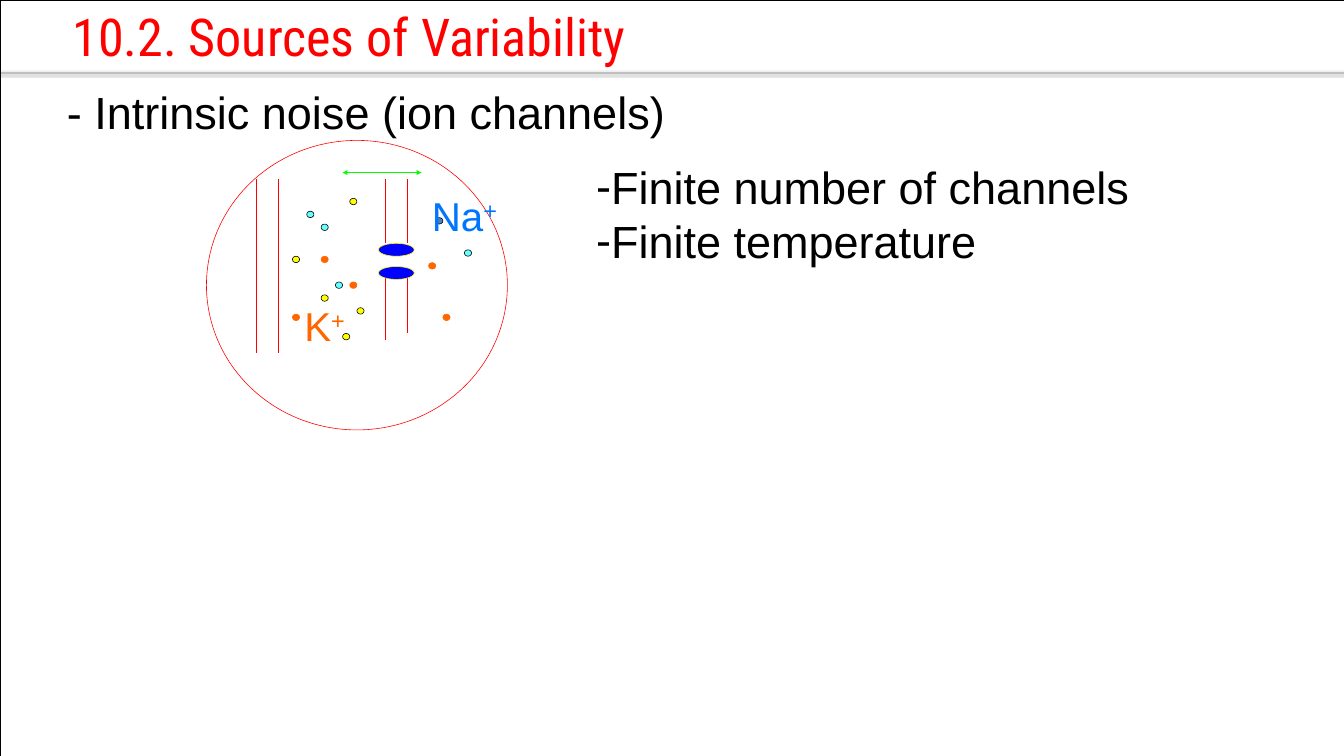
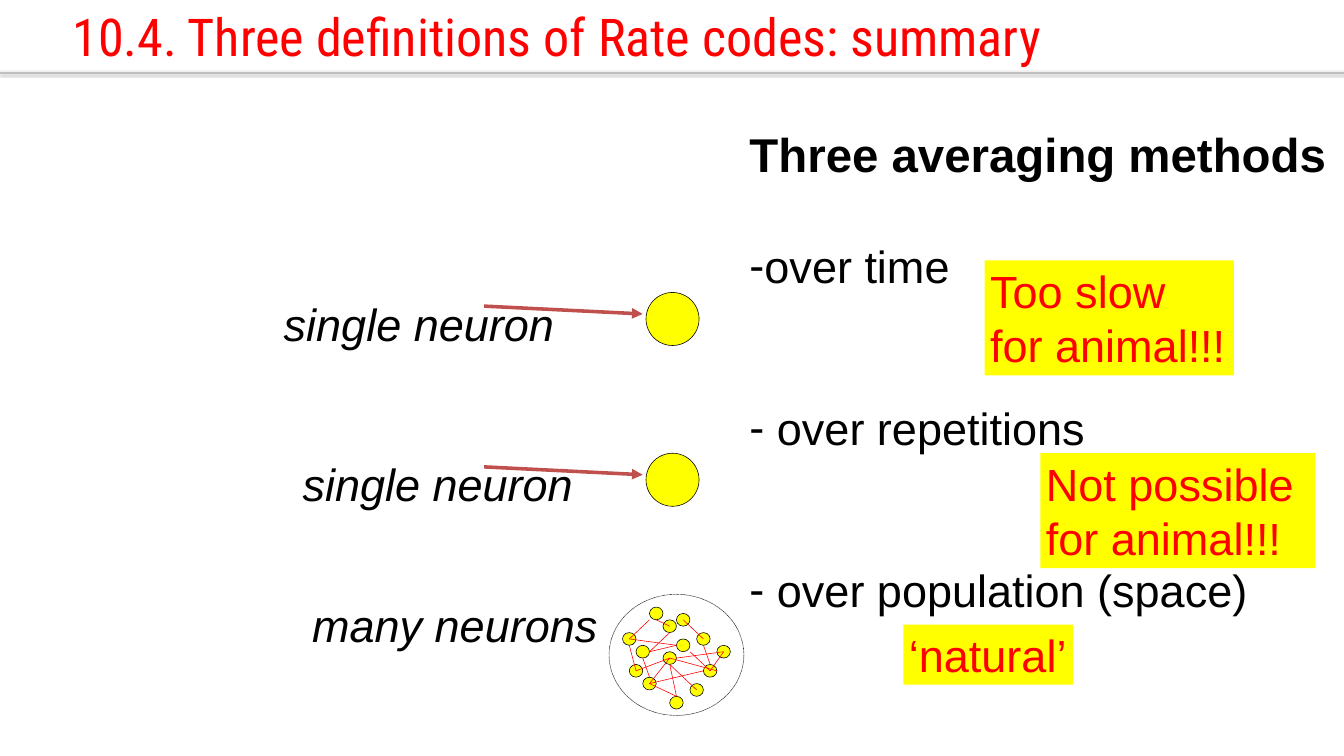
from dataclasses import dataclass

from lxml import etree
from pptx import Presentation
from pptx.dml.color import RGBColor
from pptx.enum.dml import MSO_LINE
from pptx.enum.shapes import MSO_CONNECTOR, MSO_SHAPE
from pptx.enum.text import MSO_ANCHOR, MSO_AUTO_SIZE, PP_ALIGN
from pptx.oxml.ns import qn
from pptx.util import Cm, Pt

OVAL, RECTANGLE = MSO_SHAPE.OVAL, MSO_SHAPE.RECTANGLE
STRAIGHT = MSO_CONNECTOR.STRAIGHT
DOTTED = MSO_LINE.ROUND_DOT
TOP, LEFT, NO_FIT = MSO_ANCHOR.TOP, PP_ALIGN.LEFT, MSO_AUTO_SIZE.NONE


@dataclass(frozen=True)
class Theme:
    """Colours, fonts and sizes shared by the slides."""
    black: str = "000000"
    red: str = "FF0000"
    yellow: str = "FFFF00"
    green: str = "00FF00"
    cyan: str = "66FFFF"
    steel: str = "4F81BD"
    orange: str = "FF6600"
    channel: str = "0000FF"
    sodium: str = "0076FF"
    arrow: str = "C0504D"
    rule: str = "BFBFBF"
    title_font: str = "Roboto Condensed"
    body_font: str = "Arial"
    title_size: float = 66
    heading_size: float = 60
    body_size: float = 57
    ion_size: float = 51
    leading: float = 1.2
    hairline: float = 0.75
    width: float = 60.02
    height: float = 33.76
    wide_inset: tuple = (0.53, 0.28)
    inset: tuple = (0.25, 0.13)


THEME = Theme()


@dataclass(frozen=True)
class Grid:
    """Even grid of cells laid over a drawing, in centimetres."""
    left: float
    top: float
    width: float
    height: float
    columns: int
    rows: int

    def point(self, column, row):
        """Return the position of a grid point."""
        return (self.left + column * self.width / self.columns,
                self.top + row * self.height / self.rows)

    def box(self, column, row, columns, rows):
        """Return left, top, width and height of a block of cells."""
        return (*self.point(column, row),
                columns * self.width / self.columns,
                rows * self.height / self.rows)


MEMBRANE = Grid(9.22, 6.27, 13.44, 12.93, 42, 45)
WALLS = [(7, 6, 33), (10, 6, 33), (25, 6, 16), (28, 6, 16), (25, 20, 31), (28, 20, 30)]
IONS = [
    (THEME.cyan, THEME.black, [(14, 11), (16, 13), (18, 22), (36, 17)]),
    (THEME.steel, THEME.black, [(32, 12)]),
    (THEME.yellow, THEME.black, [(19, 30), (21, 26), (20, 9), (16, 24), (12, 18)]),
    (THEME.orange, THEME.orange, [(16, 18), (12, 27), (20, 22), (33, 27), (31, 19)]),
]
POPULATION = Grid(27.2, 26.54, 6.02, 5.41, 20, 19)
NEURONS = [(6, 2), (8, 4), (10, 3), (9, 16), (16, 8), (13, 6), (8, 9), (10, 7),
           (12, 14), (14, 11), (3, 11), (2, 6), (5, 13), (4, 8)]
SYNAPSES = [
    (9, 11, 10, 16), (12, 9, 15, 12), (6, 14, 14, 12), (9, 11, 13, 15),
    (5, 10, 6, 13), (14, 8, 15, 11), (11, 4, 14, 7), (9, 6, 6, 9),
    (6, 4, 3, 7), (3, 8, 4, 12), (6, 9, 10, 8), (17, 9, 10, 10),
    (6, 14, 10, 16), (7, 4, 9, 5), (3, 7, 10, 8), (6, 14, 9, 10),
    (4, 12, 9, 10), (17, 9, 15, 12), (9, 10, 16, 12),
]


def rgb(value):
    """Turn a hex string into a colour."""
    return RGBColor.from_string(value)


def put_text(frame, text, *, size=THEME.body_size, font=THEME.body_font,
             color=THEME.black, bold=False, italic=False, bullet=None,
             before=0, leading=THEME.leading, superscript=""):
    """Append one formatted paragraph to a text frame."""
    paragraph = frame.add_paragraph() if frame.text else frame.paragraphs[0]
    paragraph.alignment = LEFT
    paragraph.space_before, paragraph.space_after = Pt(before), Pt(0)
    if leading:
        paragraph.line_spacing = Pt(size * leading)
    properties = paragraph._p.get_or_add_pPr()
    properties.set("marL", "0")
    properties.set("indent", "0")
    if bullet:
        etree.SubElement(properties, qn("a:buFont"), typeface=font)
        etree.SubElement(properties, qn("a:buChar"), char=bullet)
    else:
        etree.SubElement(properties, qn("a:buNone"))
    for part in filter(None, (text, superscript)):
        run = paragraph.add_run()
        run.text = part
        run.font.name, run.font.size = font, Pt(size)
        run.font.bold, run.font.italic = bold, italic
        run.font.color.rgb = rgb(color)
    if superscript:
        run._r.get_or_add_rPr().set("baseline", "30000")


def set_frame(frame, inset, wrap):
    """Set insets, wrapping and anchor of a text frame."""
    frame.margin_left = frame.margin_right = Cm(inset[0])
    frame.margin_top = frame.margin_bottom = Cm(inset[1])
    frame.word_wrap = wrap
    frame.auto_size = NO_FIT
    frame.vertical_anchor = TOP
    return frame


def place(placeholder, box, inset):
    """Move a placeholder and return its prepared text frame."""
    left, top, width, height = map(Cm, box)
    placeholder.left, placeholder.top = left, top
    placeholder.width, placeholder.height = width, height
    return set_frame(placeholder.text_frame, inset, True)


def add_label(shapes, box, *lines, inset=THEME.inset, fill=None, **text_format):
    """Add a text box with one paragraph for each line."""
    label = shapes.add_textbox(*map(Cm, box))
    if fill:
        label.fill.solid()
        label.fill.fore_color.rgb = rgb(fill)
    frame = set_frame(label.text_frame, inset, False)
    for line in lines:
        put_text(frame, line, **text_format)


def add_outline(shapes, kind, box, *, fill=None, line=THEME.black, dash=None):
    """Add a thin-lined preset shape."""
    shape = shapes.add_shape(kind, *map(Cm, box))
    shape.shadow.inherit = False
    if fill:
        shape.fill.solid()
        shape.fill.fore_color.rgb = rgb(fill)
    else:
        shape.fill.background()
    shape.line.color.rgb = rgb(line)
    shape.line.width = Pt(THEME.hairline)
    if dash:
        shape.line.dash_style = dash


def add_line(shapes, start, end, *, color=THEME.red, width=THEME.hairline, arrows=()):
    """Add a straight line and return its empty effect list."""
    line = shapes.add_connector(STRAIGHT, *map(Cm, (*start, *end)))
    line.line.color.rgb = rgb(color)
    line.line.width = Pt(width)
    properties = line._element.spPr
    for arrow in arrows:
        etree.SubElement(properties.find(qn("a:ln")), qn(arrow), type="triangle")
    return etree.SubElement(properties, qn("a:effectLst"))


def new_slide(deck, title):
    """Add a slide with the shared title and shadowed rule."""
    slide = deck.slides.add_slide(deck.slide_layouts[1])
    frame = place(slide.shapes.title, (2.98, 0.1, 56.8, 3), (0.25, 0.1))
    put_text(frame, title, size=THEME.title_size, font=THEME.title_font,
             color=THEME.red, leading=None)
    effects = add_line(slide.shapes, (0, 3.25), (THEME.width, 3.25),
                       color=THEME.rule, width=2)
    shadow = etree.SubElement(effects, qn("a:outerShdw"), blurRad=str(Pt(3.1)),
                              dist=str(Pt(1.6)), dir="5400000", rotWithShape="0")
    tint = etree.SubElement(shadow, qn("a:srgbClr"), val=THEME.black)
    etree.SubElement(tint, qn("a:alpha"), val="38000")
    return slide


def draw_membrane(shapes):
    """Draw the membrane with its ion channel and ions."""
    grid = MEMBRANE
    add_outline(shapes, OVAL, grid.box(0, 0, 42, 45), line=THEME.red)
    for column, top, bottom in WALLS:
        add_line(shapes, grid.point(column, top), grid.point(column, bottom))
    for row in (16, 19.6):
        add_outline(shapes, OVAL, grid.box(24, row, 5, 2),
                    fill=THEME.channel, line=THEME.yellow)
    for fill, line, cells in IONS:
        for cell in cells:
            add_outline(shapes, OVAL, grid.box(*cell, 1, 1), fill=fill, line=line)
    for name, color, cells in (("Na", THEME.sodium, (29.8, 7, 13, 12)),
                               ("K", THEME.orange, (12, 24, 9.4, 12))):
        add_label(shapes, grid.box(*cells), name, superscript="+", color=color,
                  size=THEME.ion_size, inset=THEME.wide_inset)
    add_line(shapes, grid.point(19, 5), grid.point(30, 5), color=THEME.green,
             arrows=("a:headEnd", "a:tailEnd"))


def draw_population(shapes):
    """Draw the network of many neurons."""
    grid = POPULATION
    add_outline(shapes, OVAL, grid.box(0, 0, 20, 19), dash=DOTTED)
    for cell in NEURONS:
        add_outline(shapes, OVAL, grid.box(*cell, 2, 2), fill=THEME.yellow)
    for synapse in SYNAPSES:
        add_line(shapes, grid.point(*synapse[:2]), grid.point(*synapse[2:]))


def build_variability(deck):
    """Build the slide on sources of variability."""
    slide = new_slide(deck, "10.2. Sources of Variability")
    add_outline(slide.shapes, RECTANGLE, (0, 0, THEME.width, THEME.height))
    add_label(slide.shapes, (2.46, 3.51, 28.07, 2.97),
              "- Intrinsic noise (ion channels)", inset=THEME.wide_inset)
    draw_membrane(slide.shapes.add_group_shape().shapes)
    causes = place(slide.placeholders[1], (26.09, 6.86, 26, 5.41), THEME.wide_inset)
    for cause in ("Finite number of channels", "Finite temperature"):
        put_text(causes, cause, bullet="-")


def build_rate_codes(deck):
    """Build the summary slide on rate codes."""
    slide = new_slide(deck, "10.4. Three definitions of Rate codes: summary")
    shapes = slide.shapes
    methods = place(slide.placeholders[1], (33.22, 5.44, 26.7, 22.45), THEME.inset)
    put_text(methods, "Three averaging methods", size=THEME.heading_size, bold=True)
    gap = 2 * THEME.body_size * THEME.leading
    for method, before in (("over time", THEME.heading_size * THEME.leading),
                           (" over repetitions", gap),
                           (" over population (space)", gap)):
        put_text(methods, method, bullet="-", before=before)
    for box, *verdict in (
            ((46.46, 20.24, 12.27, 5.13), "Not possible", "for animal!!!"),
            ((43.97, 11.63, 11.13, 5.13), "Too slow", "for animal!!!"),
            ((40.34, 27.89, 7.57, 2.69), "‘natural’")):
        add_label(shapes, box, *verdict, fill=THEME.yellow, color=THEME.red)
    for box, subject in (((12.42, 13.11, 12.73, 2.69), "single neuron"),
                         ((13.26, 20.24, 12.73, 2.69), "single neuron"),
                         ((13.69, 26.54, 13.39, 2.69), "many neurons")):
        add_label(shapes, box, subject, italic=True)
    for top in (13.06, 20.24):
        add_outline(shapes, OVAL, (28.85, top, 2.37, 2.37), fill=THEME.yellow)
        add_line(shapes, (21.62, top + 0.61), (28.7, top + 0.96),
                 color=THEME.arrow, width=4.5, arrows=("a:tailEnd",))
    draw_population(shapes.add_group_shape().shapes)


def main():
    """Build and save the presentation."""
    deck = Presentation()
    deck.slide_width, deck.slide_height = Cm(THEME.width), Cm(THEME.height)
    build_variability(deck)
    build_rate_codes(deck)
    deck.save("out.pptx")


if __name__ == "__main__":
    main()
